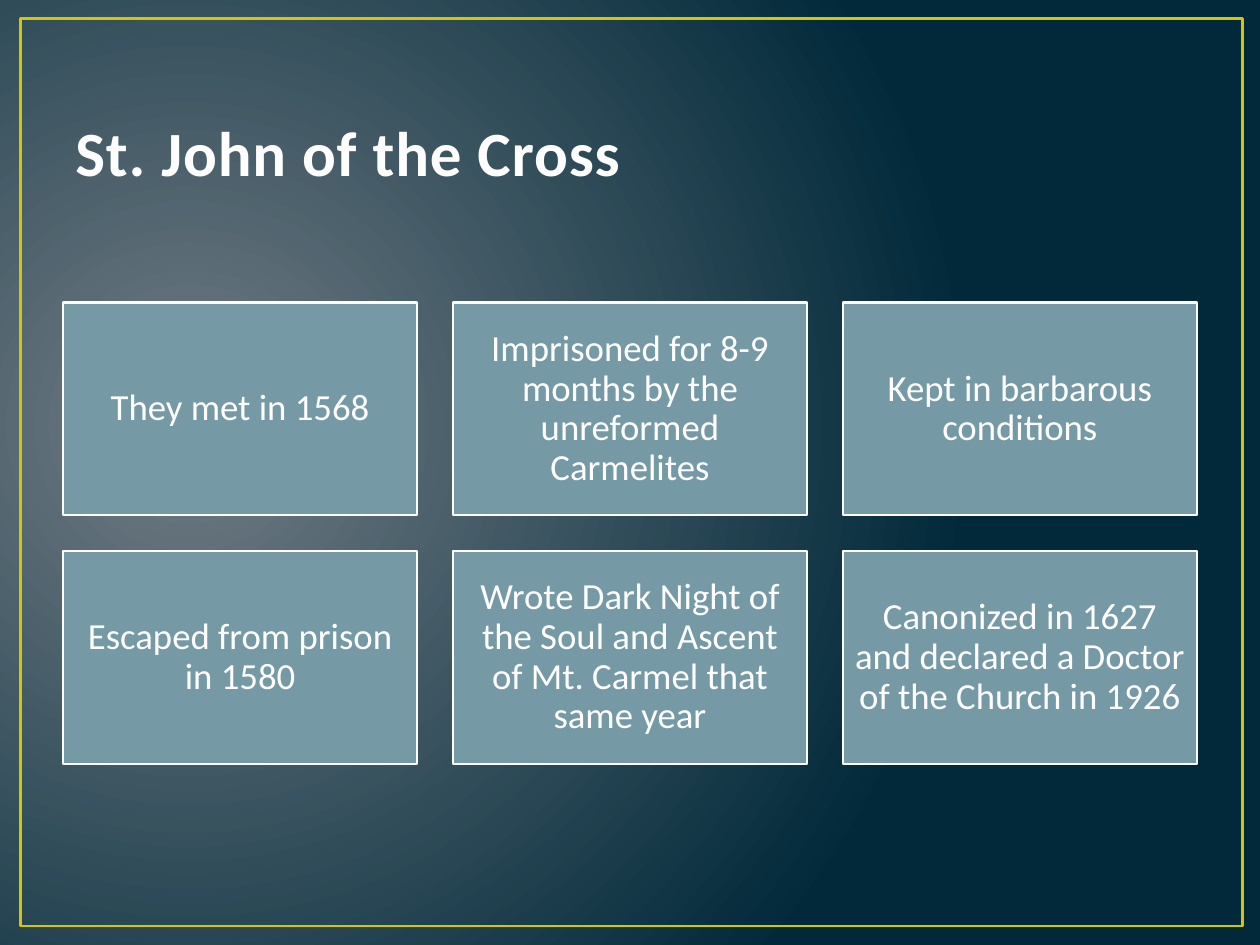
from dataclasses import dataclass

from lxml import etree
from pptx import Presentation
from pptx.dml.color import RGBColor
from pptx.enum.shapes import MSO_SHAPE
from pptx.enum.text import MSO_ANCHOR, PP_ALIGN
from pptx.oxml.ns import qn
from pptx.slide import Slide
from pptx.util import Cm, Pt

RECT = MSO_SHAPE.RECTANGLE
MIDDLE, BOTTOM = MSO_ANCHOR.MIDDLE, MSO_ANCHOR.BOTTOM
CENTER = PP_ALIGN.CENTER


@dataclass(frozen=True)
class Theme:
    font: str = "Calibri"
    glow: str = "717C84"
    night: str = "01293A"
    frame: str = "CFC60D"
    card: str = "759AA5"
    card_text: str = "FFFFFF"
    title: str = "FEFEFE"
    title_size: float = 36
    card_size: float = 21
    frame_width: float = 1.5
    card_border: float = 1.25


@dataclass(frozen=True)
class Card:
    row: int
    column: int
    text: str


THEME = Theme()
CARD_W, CARD_H, GAP = 7.14, 4.29, 0.72
GRID_LEFT, GRID_TOP = 1.27, 6.1
COLUMNS = 3
FACTS = [
    "They met in 1568",
    "Imprisoned for 8-9 months by the unreformed Carmelites",
    "Kept in barbarous conditions",
    "Escaped from prison in 1580",
    "Wrote Dark Night of the Soul and Ascent of Mt. Carmel that same year",
    "Canonized in 1627 and declared a Doctor of the Church in 1926",
]
CARDS = [Card(*divmod(i, COLUMNS), text) for i, text in enumerate(FACTS)]


def rgb(value: str) -> RGBColor:
    return RGBColor.from_string(value)


def paint_background(s: Slide) -> None:
    fill = s.background.fill
    fill.gradient()
    for stop, color in zip(fill.gradient_stops, (THEME.glow, THEME.night)):
        stop.color.rgb = rgb(color)
    grad = s._element.find(".//" + qn("a:gradFill"))
    grad.remove(grad.find(qn("a:lin")))
    circle = etree.SubElement(grad, qn("a:path"), path="circle")
    etree.SubElement(circle, qn("a:fillToRect"),
                     l="15000", t="50000", r="85000", b="60000")


def add_frame(s: Slide) -> None:
    sp = s.shapes.add_shape(RECT, Cm(0.41), Cm(0.38), Cm(24.64), Cm(18.29))
    sp.shadow.inherit = False
    sp.fill.background()
    sp.line.color.rgb = rgb(THEME.frame)
    sp.line.width = Pt(THEME.frame_width)


def add_title(s: Slide, text: str) -> None:
    sp = s.shapes.add_textbox(Cm(1.27), Cm(0.76), Cm(22.86), Cm(3.18))
    tf = sp.text_frame
    tf.word_wrap = True
    tf.vertical_anchor = BOTTOM
    tf.text = text
    r = tf.paragraphs[0].runs[0]
    r.font.name = THEME.font
    r.font.size = Pt(THEME.title_size)
    r.font.bold = True
    r.font.color.rgb = rgb(THEME.title)
    r.font._element.set("spc", "50")


def add_card(s: Slide, card: Card) -> None:
    left = GRID_LEFT + card.column * (CARD_W + GAP)
    top = GRID_TOP + card.row * (CARD_H + GAP)
    sp = s.shapes.add_shape(RECT, Cm(left), Cm(top), Cm(CARD_W), Cm(CARD_H))
    sp.shadow.inherit = False
    sp.fill.solid()
    sp.fill.fore_color.rgb = rgb(THEME.card)
    sp.line.color.rgb = rgb(THEME.card_text)
    sp.line.width = Pt(THEME.card_border)
    tf = sp.text_frame
    tf.word_wrap = True
    tf.vertical_anchor = MIDDLE
    tf.margin_left = tf.margin_right = Cm(0.22)
    tf.margin_top = tf.margin_bottom = Cm(0.22)
    tf.text = card.text
    p = tf.paragraphs[0]
    p.alignment = CENTER
    p.line_spacing = 0.9
    r = p.runs[0]
    r.font.name = THEME.font
    r.font.size = Pt(THEME.card_size)
    r.font.color.rgb = rgb(THEME.card_text)


def main() -> None:
    prs = Presentation()
    prs.slide_width, prs.slide_height = Cm(25.4), Cm(19.05)
    s = prs.slides.add_slide(prs.slide_layouts[6])
    paint_background(s)
    add_frame(s)
    add_title(s, "St. John of the Cross")
    for card in CARDS:
        add_card(s, card)
    prs.save("out.pptx")


if __name__ == "__main__":
    main()
